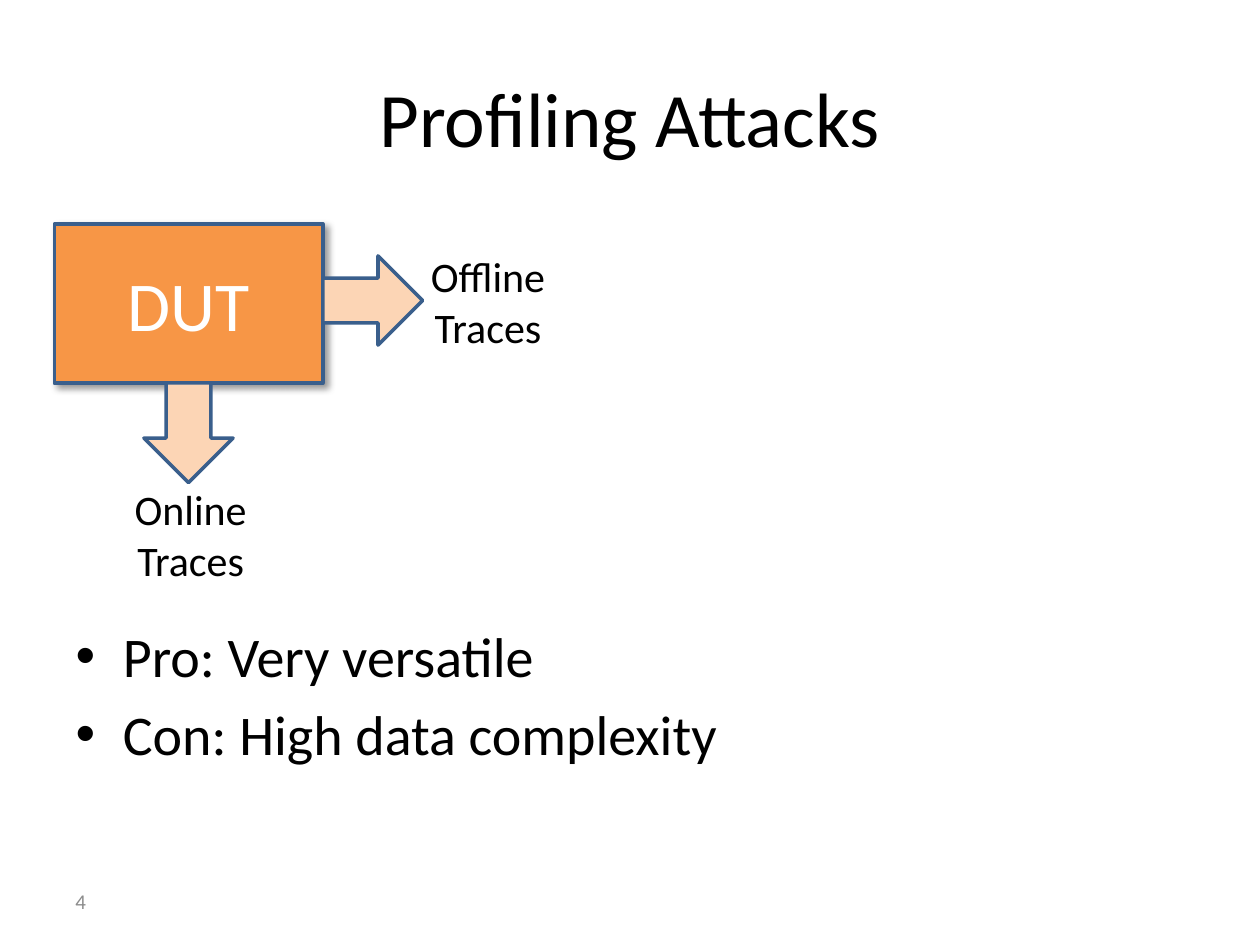
"""Build the Profiling Attacks slide with its device diagram and pro/con list."""
import pptx
import pptx.dml.color
import pptx.enum.shapes
import pptx.enum.text
import pptx.oxml
import pptx.oxml.ns
import pptx.util

Pt = pptx.util.Pt
ALIGN = pptx.enum.text.PP_ALIGN
ANCHOR = pptx.enum.text.MSO_ANCHOR
SHAPE = pptx.enum.shapes.MSO_SHAPE
COLORS = {
    "text": "000000",
    "number": "8C8C8C",
    "device": "F79646",
    "arrow": "FCD5B5",
    "outline": "3A5F8C",
    "device_text": "FFFFFF",
}


def color(name):
    return pptx.dml.color.RGBColor.from_string(COLORS[name])


def write(holder, text, size, ink="text", align=ALIGN.CENTER, anchor=ANCHOR.MIDDLE, gap=0):
    frame = holder.text_frame
    frame.word_wrap = True
    frame.vertical_anchor = anchor
    frame.text = text
    for index, paragraph in enumerate(frame.paragraphs):
        paragraph.alignment = align
        paragraph.space_before = Pt(gap if index else 0)
        for run in paragraph.runs:
            run.font.name = "Calibri"
            run.font.size = Pt(size)
            run.font.color.rgb = color(ink)


deck = pptx.Presentation()
deck.slide_width, deck.slide_height = Pt(720), Pt(540)
slide = deck.slides.add_slide(deck.slide_layouts[1])

title, verdict = slide.placeholders
title.left, title.top, title.width, title.height = Pt(36), Pt(21.6), Pt(648), Pt(90)
write(title, "Profiling Attacks", 44)

number = slide.shapes.add_textbox(Pt(36), Pt(500.4), Pt(168), Pt(28.8))
write(number, "4", 12, ink="number", align=ALIGN.LEFT)

blocks = [
    (SHAPE.RECTANGLE, 31, 128, 153.5, 91, 0, "device"),
    (SHAPE.RIGHT_ARROW, 79.2, 221.8, 57, 51, 90, "arrow"),
    (SHAPE.RIGHT_ARROW, 184.5, 146.2, 57, 51, 0, "arrow"),
]
for preset, left, top, width, height, turn, fill in blocks:
    block = slide.shapes.add_shape(preset, Pt(left), Pt(top), Pt(width), Pt(height))
    block.rotation = turn
    block.shadow.inherit = False
    block.fill.solid()
    block.fill.fore_color.rgb = color(fill)
    block.line.color.rgb = color("outline")
    block.line.width = Pt(2)
    if fill == "device":
        write(block, "DUT", 40, ink="device_text")
        effects = block._element.spPr.find(pptx.oxml.ns.qn("a:effectLst"))
        effects.append(pptx.oxml.parse_xml(
            f'<a:outerShdw {pptx.oxml.ns.nsdecls("a")} blurRad="{Pt(4)}" dist="{Pt(3)}" '
            'dir="2700000" algn="tl" rotWithShape="0"><a:srgbClr val="000000">'
            '<a:alpha val="40000"/></a:srgbClr></a:outerShdw>'))

for caption, left, top in [("Online Traces", 42.5, 273), ("Offline Traces", 212.4, 139.7)]:
    traces = slide.shapes.add_textbox(Pt(left), Pt(top), Pt(133), Pt(65.5))
    write(traces, caption, 24, anchor=ANCHOR.TOP)

verdict.left, verdict.top, verdict.width, verdict.height = Pt(36), Pt(351.5), Pt(648), Pt(131)
write(verdict, "Pro: Very versatile\nCon: High data complexity", 32,
      align=ALIGN.LEFT, anchor=ANCHOR.TOP, gap=6.4)

deck.save("out.pptx")
